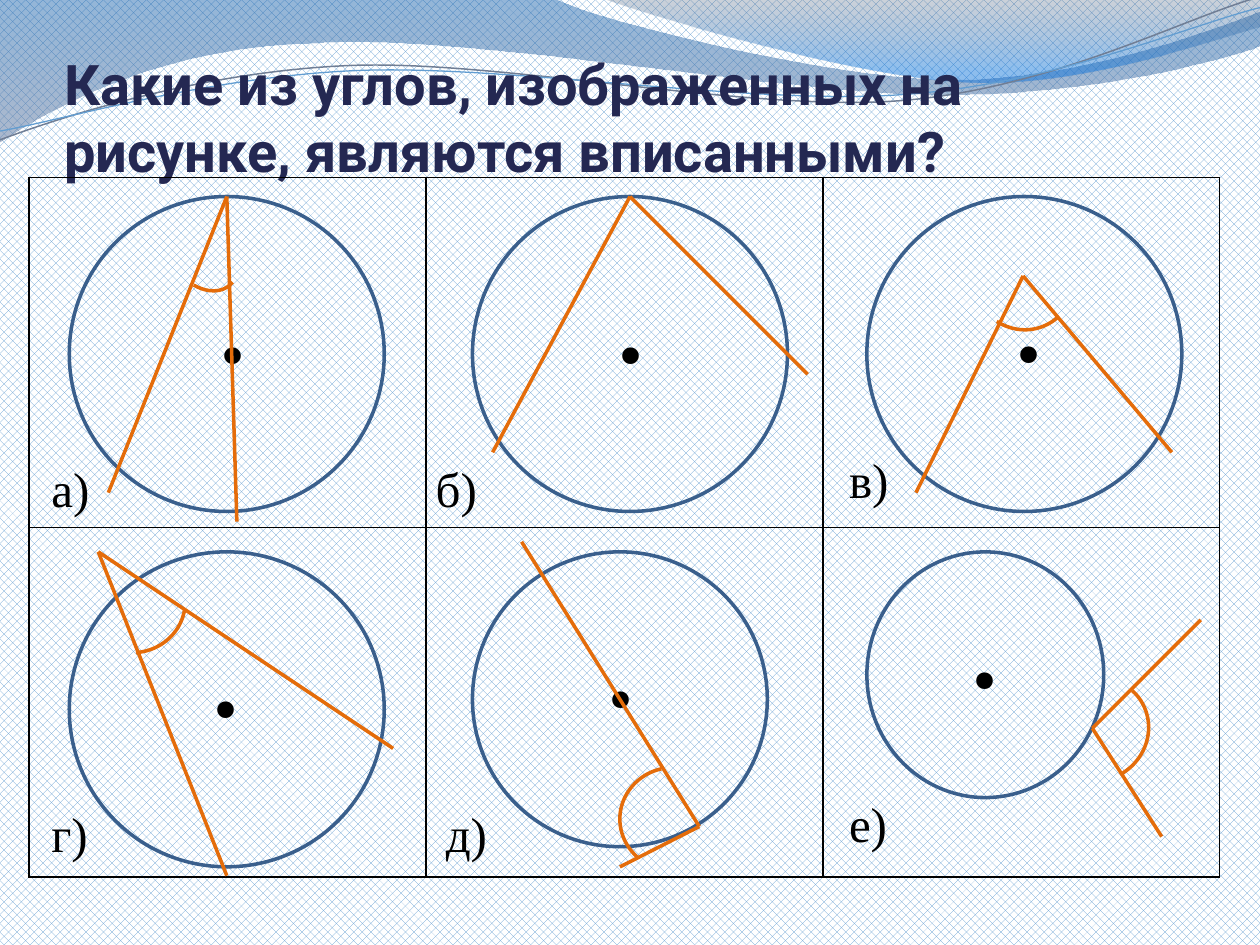
from math import cos, radians, sin

from lxml import etree
from pptx import Presentation
from pptx.dml.color import RGBColor
from pptx.enum.dml import MSO_PATTERN
from pptx.enum.shapes import MSO_CONNECTOR, MSO_SHAPE
from pptx.enum.text import MSO_ANCHOR, MSO_AUTO_SIZE
from pptx.oxml.ns import qn
from pptx.util import Inches, Pt

NAVY = RGBColor(0x24, 0x28, 0x52)
BLACK = RGBColor(0, 0, 0)
WHITE = RGBColor(0xFF, 0xFF, 0xFF)
SKY = RGBColor(0x62, 0x9D, 0xD1)
STEEL = RGBColor(0x70, 0x7E, 0x95)
CIRCLE_BLUE = RGBColor(0x3A, 0x5F, 0x8C)
ORANGE = RGBColor(0xE4, 0x6C, 0x0A)
DEEP_BLUE = RGBColor(0x12, 0x5E, 0xAA)
GREY_BLUE = RGBColor(0x69, 0x7F, 0xA4)
SLATE = RGBColor(0x59, 0x69, 0x82)
BRIGHT_BLUE = RGBColor(0x06, 0x70, 0xDA)
SERIF = "Times New Roman"
STRAND_TILT = 2.7
STRAND_CENTRE = (4.99, 0.58)

WIDE_WAVE = [(0, 0), (4.4, -0.01),
             (4.76, 0.17, 6.64, 0.63, 7.58, 0.63), (8.53, 0.63, 9.58, 0.26, 10, 0.09),
             (10.01, 0.36),
             (9.83, 0.44, 8.7, 0.76, 7.46, 0.75), (6.22, 0.75, 3.82, 0.28, 2.57, 0.34),
             (1.29, 0.36, 0.46, 0.83, -0.01, 1.13), (0, 0)]
RIGHT_WAVE = [(4.79, -0.01), (5.09, 0.11, 6.82, 0.62, 7.69, 0.65),
              (8.56, 0.69, 9.61, 0.32, 10, 0.21), (10, 0), (4.79, -0.01)]
UPPER_STRAND = [(0, 1.11), (0.48, 0.93, 1.58, 0.57, 2.77, 0.52),
                (3.95, 0.47, 5.93, 0.89, 7.13, 0.8), (8.33, 0.71, 9.38, 0.15, 9.98, -0.02)]
LOWER_STRAND = [(0, 1.04), (0.47, 0.96, 1.64, 0.61, 2.83, 0.56),
                (4.03, 0.51, 5.97, 0.84, 7.17, 0.75), (8.36, 0.67, 9.41, 0.21, 10, 0.06)]

CIRCLES = [(0.55, 1.56, 2.5, 2.5), (3.75, 1.56, 2.5, 2.5), (6.88, 1.56, 2.5, 2.5),
           (0.55, 4.38, 2.5, 2.5), (3.75, 4.38, 2.34, 2.34), (6.88, 4.38, 1.88, 1.95)]
CENTRES = [(1.61, 1.72), (4.77, 1.72), (7.93, 1.71),
           (1.56, 4.53), (4.69, 4.45), (7.58, 4.3)]
ANGLES = [((1.8, 1.56), (1.88, 4.14), (0.86, 3.91)),
          ((5, 1.56), (6.41, 2.97), (3.91, 3.59)),
          ((8.12, 2.19), (9.3, 3.59), (7.27, 3.91)),
          ((0.78, 4.38), (3.12, 5.94), (1.8, 6.95)),
          ((5.55, 6.56), (4.14, 4.3), (4.92, 6.88)),
          ((8.67, 5.78), (9.53, 4.92), (9.22, 6.64))]
ARCS = [((1.29, 1.49, 0.55, 0.86), 146.1, 157.6, 185.2),
        ((7.71, 1.76, 0.82, 0.86), 157.7, 150.65, 193.42),
        ((0.63, 4.34, 0.82, 0.86), 98.7, 161.46, 207.52),
        ((4.94, 6.07, 0.82, 0.86), 270, 134.47, 207.52),
        ((8.28, 5.36, 0.82, 0.86), 62.7, 150.65, 214.81)]
LABELS = [("а)", 0.31, 3.59, 0.51), ("б)", 3.36, 3.59, 0.53), ("в)", 6.64, 3.52, 0.52),
          ("г)", 0.31, 6.33, 0.51), ("д)", 3.44, 6.33, 0.53), ("е)", 6.64, 6.25, 0.51)]


def set_line(shape, color, width):
    shape.line.color.rgb = color
    shape.line.width = Pt(width)


def tilt(x, y):
    cx, cy = STRAND_CENTRE
    a = radians(STRAND_TILT)
    return (cx + (x - cx) * cos(a) - (y - cy) * sin(a),
            cy + (x - cx) * sin(a) + (y - cy) * cos(a))


def pairs(segment):
    return list(zip(segment[::2], segment[1::2]))


def add_curve(slide, segments, closed):
    points = [(Inches(x), Inches(y)) for segment in segments for x, y in segment]
    builder = slide.shapes.build_freeform(*points[0])
    builder.add_line_segments(points[1:], close=closed)
    sp = builder.convert_to_shape()
    sp.shadow.inherit = False
    lines = iter(sp._element.findall(".//" + qn("a:lnTo")))
    for segment in segments[1:]:
        first, *others = [next(lines) for _ in segment]
        if others:
            first.tag = qn("a:cubicBezTo")
            for other in others:
                first.append(other[0])
                other.getparent().remove(other)
    return sp


def add_wave(slide, wave, stops):
    sp = add_curve(slide, [pairs(segment) for segment in wave], True)
    sp.line.fill.background()
    sp.fill.gradient()
    sp.fill.gradient_angle = 270
    for stop, (position, color, _) in zip(sp.fill.gradient_stops, stops):
        stop.position = position
        stop.color.rgb = color
    colors = sp._element.spPr.findall(".//" + qn("a:srgbClr"))
    for clr, (_, _, opacity) in zip(colors, stops):
        etree.SubElement(clr, qn("a:alpha"), val=str(opacity * 1000))


def add_strand(slide, strand, color, width):
    segments = [[tilt(x, y) for x, y in pairs(segment)] for segment in strand]
    sp = add_curve(slide, segments, False)
    sp.rotation = 360 - STRAND_TILT
    sp.fill.background()
    set_line(sp, color, width)


def add_text(slide, text, box, size, font=SERIF, color=BLACK, wrap=True):
    sp = slide.shapes.add_textbox(*map(Inches, box))
    tf = sp.text_frame
    tf.text = text
    tf.word_wrap = wrap
    f = tf.paragraphs[0].runs[0].font
    f.size, f.name, f.color.rgb = Pt(size), font, color
    return tf


def add_title(slide):
    tf = add_text(slide, "Какие из углов, изображенных на рисунке, являются вписанными?",
                  (0.51, 0.21, 9, 1.25), 32, "Roboto", NAVY)
    tf.paragraphs[0].runs[0].font.bold = True
    tf.vertical_anchor = MSO_ANCHOR.BOTTOM
    tf.margin_left = tf.margin_right = tf.margin_bottom = 0


def set_borders(cell):
    tc_pr = cell._tc.get_or_add_tcPr()
    for i, side in enumerate(("lnL", "lnR", "lnT", "lnB")):
        ln = etree.Element(qn("a:" + side), w=str(Pt(1)))
        fill = etree.SubElement(ln, qn("a:solidFill"))
        etree.SubElement(fill, qn("a:srgbClr"), val=str(BLACK))
        tc_pr.insert(i, ln)


def add_grid(slide):
    box = map(Inches, (0.23, 1.41, 9.45, 5.55))
    table = slide.shapes.add_table(2, 3, *box).table
    table.first_row = table.horz_banding = False
    for cell in table.iter_cells():
        cell.fill.background()
        set_borders(cell)


def add_outline(slide, kind, box, color):
    sp = slide.shapes.add_shape(kind, *map(Inches, box))
    sp.shadow.inherit = False
    sp.fill.background()
    set_line(sp, color, 2)
    return sp


def add_angle(slide, vertex, *ends):
    for end in ends:
        line = slide.shapes.add_connector(MSO_CONNECTOR.STRAIGHT, *map(Inches, vertex + end))
        set_line(line, ORANGE, 2)
        etree.SubElement(line._element.spPr, qn("a:effectLst"))


def add_arc(slide, box, rotation, start, end):
    sp = add_outline(slide, MSO_SHAPE.ARC, box, ORANGE)
    sp.rotation = rotation
    sp.adjustments[0], sp.adjustments[1] = start, end


def main():
    prs = Presentation()
    prs.slide_width, prs.slide_height = Inches(10), Inches(7.5)
    slide = prs.slides.add_slide(prs.slide_layouts[6])
    bg = slide.background.fill
    bg.patterned()
    bg.pattern = MSO_PATTERN.PERCENT_50
    bg.fore_color.rgb, bg.back_color.rgb = SKY, WHITE
    add_wave(slide, WIDE_WAVE, [(0, DEEP_BLUE, 45), (1, GREY_BLUE, 55)])
    add_wave(slide, RIGHT_WAVE, [(0, SLATE, 30), (0.8, BRIGHT_BLUE, 45)])
    add_strand(slide, UPPER_STRAND, STEEL, 0.85)
    add_strand(slide, LOWER_STRAND, SKY, 0.75)
    add_title(slide)
    add_grid(slide)
    for box in CIRCLES:
        add_outline(slide, MSO_SHAPE.OVAL, box, CIRCLE_BLUE)
    for x, y in CENTRES:
        tf = add_text(slide, ".", (x, y, 0.39, 1.45), 80)
        tf.auto_size = MSO_AUTO_SIZE.SHAPE_TO_FIT_TEXT
    for angle in ANGLES:
        add_angle(slide, *angle)
    for arc in ARCS:
        add_arc(slide, *arc)
    for text, x, y, width in LABELS:
        tf = add_text(slide, text, (x, y, width, 0.57), 28, wrap=False)
        tf.auto_size = MSO_AUTO_SIZE.SHAPE_TO_FIT_TEXT
    prs.save("out.pptx")


if __name__ == "__main__":
    main()
